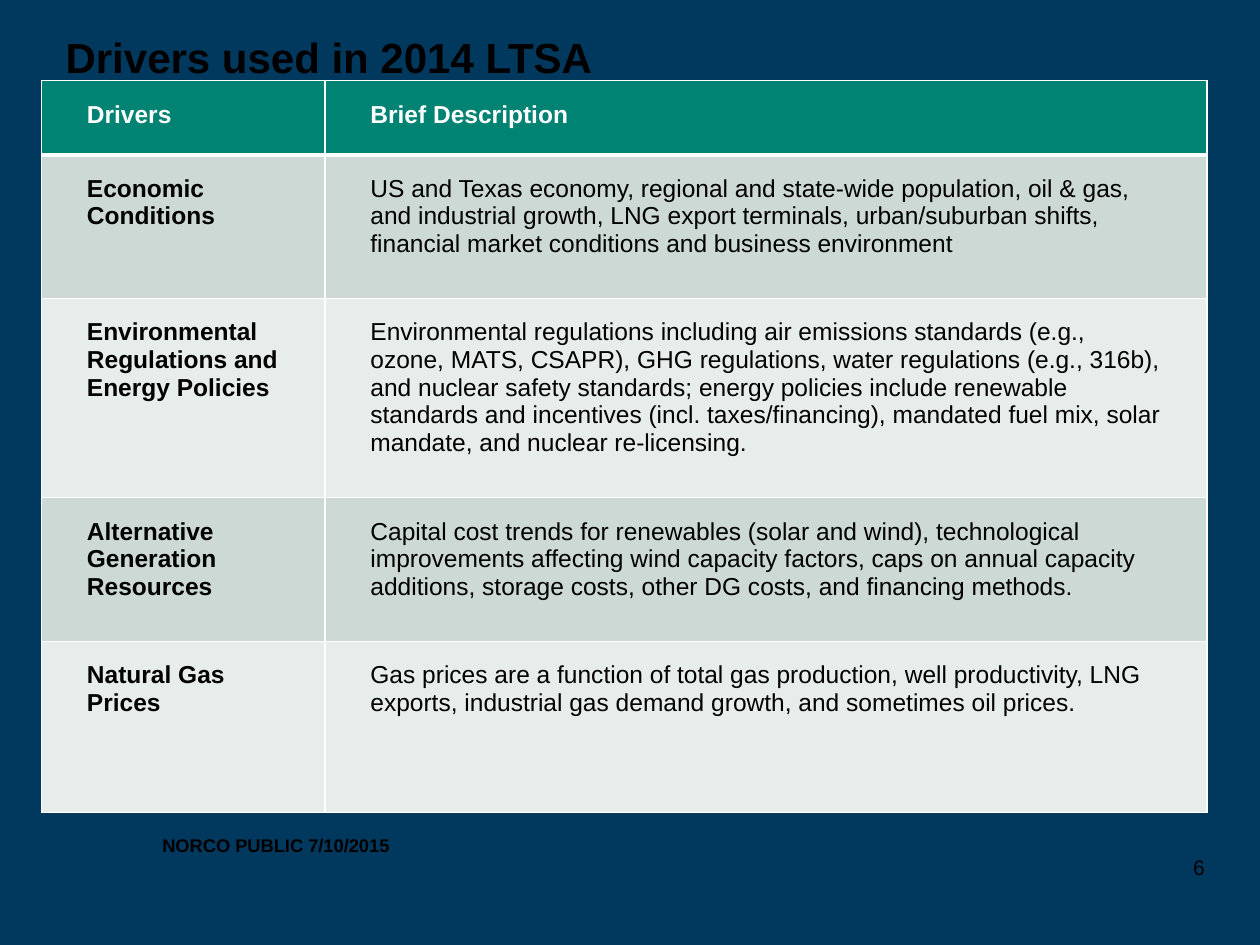
from dataclasses import dataclass

from lxml.etree import SubElement
from pptx import Presentation
from pptx.dml.color import RGBColor
from pptx.enum.shapes import MSO_SHAPE
from pptx.enum.text import MSO_ANCHOR, PP_ALIGN
from pptx.oxml.ns import qn
from pptx.util import Inches, Pt

COLORS = {
    "navy": "00385E",
    "teal": "008373",
    "dark": "CCD9D5",
    "light": "E7EDEB",
    "white": "FFFFFF",
    "black": "000000",
}


@dataclass
class Driver:
    name: str
    text: str
    height: float


@dataclass
class Label:
    text: str
    box: tuple
    size: float
    bold: bool = False
    align: PP_ALIGN = PP_ALIGN.LEFT
    anchor: MSO_ANCHOR = MSO_ANCHOR.TOP


ROWS = [
    Driver("Drivers", "Brief Description", 0.59),
    Driver("Economic Conditions",
           "US and Texas economy, regional and state-wide population, oil & gas, "
           "and industrial growth, LNG export terminals, urban/suburban shifts, "
           "financial market conditions and business environment", 1.14),
    Driver("Environmental Regulations and Energy Policies",
           "Environmental regulations including air emissions standards (e.g., "
           "ozone, MATS, CSAPR), GHG regulations, water regulations (e.g., 316b), "
           "and nuclear safety standards; energy policies include renewable "
           "standards and incentives (incl. taxes/financing), mandated fuel mix, "
           "solar mandate, and nuclear re-licensing.", 1.58),
    Driver("Alternative Generation Resources",
           "Capital cost trends for renewables (solar and wind), technological "
           "improvements affecting wind capacity factors, caps on annual capacity "
           "additions, storage costs, other DG costs, and financing methods.", 1.14),
    Driver("Natural Gas Prices",
           "Gas prices are a function of total gas production, well productivity, "
           "LNG exports, industrial gas demand growth, and sometimes oil prices.",
           1.36),
]
WIDTHS = (2.25, 7)
LABELS = [
    Label("NORCO PUBLIC 7/10/2015", (1.19, 6.57, 7.51, 0.28), 10.5, bold=True),
    Label("6", (7.33, 6.78, 2.33, 0.2), 12, align=PP_ALIGN.RIGHT,
          anchor=MSO_ANCHOR.MIDDLE),
]


def rgb(key: str) -> RGBColor:
    return RGBColor.from_string(COLORS[key])


def style(para, size: float, bold: bool, color: str = "black",
          align: PP_ALIGN = PP_ALIGN.LEFT) -> None:
    para.alignment = align
    font = para.font
    font.name, font.size, font.bold = "Arial", Pt(size), bold
    font.color.rgb = rgb(color)


def add_back(slide) -> None:
    """Navy panel behind everything else, the title included."""
    box = map(Inches, (-0.05, 0, 10.1, 7.5))
    panel = slide.shapes.add_shape(MSO_SHAPE.RECTANGLE, *box)
    panel.shadow.inherit = False
    panel.fill.solid()
    panel.fill.fore_color.rgb = rgb("navy")
    panel.line.fill.background()
    slide.shapes.title.element.addprevious(panel.element)


def add_title(slide, text: str) -> None:
    title = slide.shapes.title
    title.left, title.top, title.width, title.height = map(
        Inches, (0.42, 0.2, 9.25, 0.5))
    frame = title.text_frame
    frame.text = text
    frame.vertical_anchor = MSO_ANCHOR.MIDDLE
    style(frame.paragraphs[0], 24, True)


def add_label(slide, label: Label) -> None:
    frame = slide.shapes.add_textbox(*map(Inches, label.box)).text_frame
    frame.word_wrap = True
    frame.vertical_anchor = label.anchor
    frame.text = label.text
    style(frame.paragraphs[0], label.size, label.bold, align=label.align)


def add_edges(cell, row: int) -> None:
    """White cell borders, thicker between the header and the body."""
    widths = {"L": 1, "R": 1, "T": 3 if row == 1 else 1, "B": 3 if row == 0 else 1}
    props = cell._tc.get_or_add_tcPr()
    for side, width in widths.items():
        line = SubElement(props, qn(f"a:ln{side}"), w=str(Pt(width)))
        fill = SubElement(line, qn("a:solidFill"))
        SubElement(fill, qn("a:srgbClr"), val=COLORS["white"])


def fill_cell(cell, text: str, row: int, col: int) -> None:
    head = row == 0
    add_edges(cell, row)
    cell.fill.solid()
    cell.fill.fore_color.rgb = rgb("teal" if head else "dark" if row % 2 else "light")
    cell.margin_left = cell.margin_right = Inches(0.36)
    cell.margin_top = cell.margin_bottom = Inches(0.16)
    cell.text = text
    style(cell.text_frame.paragraphs[0], 14, head or col == 0,
          "white" if head else "black")


def add_grid(slide) -> None:
    high = sum(row.height for row in ROWS)
    box = map(Inches, (0.33, 0.64, sum(WIDTHS), high))
    table = slide.shapes.add_table(len(ROWS), len(WIDTHS), *box).table
    for col, width in enumerate(WIDTHS):
        table.columns[col].width = Inches(width)
    for row, item in enumerate(ROWS):
        table.rows[row].height = Inches(item.height)
        for col, text in enumerate((item.name, item.text)):
            fill_cell(table.cell(row, col), text, row, col)


def main() -> None:
    deck = Presentation()
    deck.slide_width, deck.slide_height = Inches(10), Inches(7.5)
    slide = deck.slides.add_slide(deck.slide_layouts[5])
    add_back(slide)
    add_title(slide, "Drivers used in 2014 LTSA")
    for label in LABELS:
        add_label(slide, label)
    add_grid(slide)
    deck.save("out.pptx")


if __name__ == "__main__":
    main()
